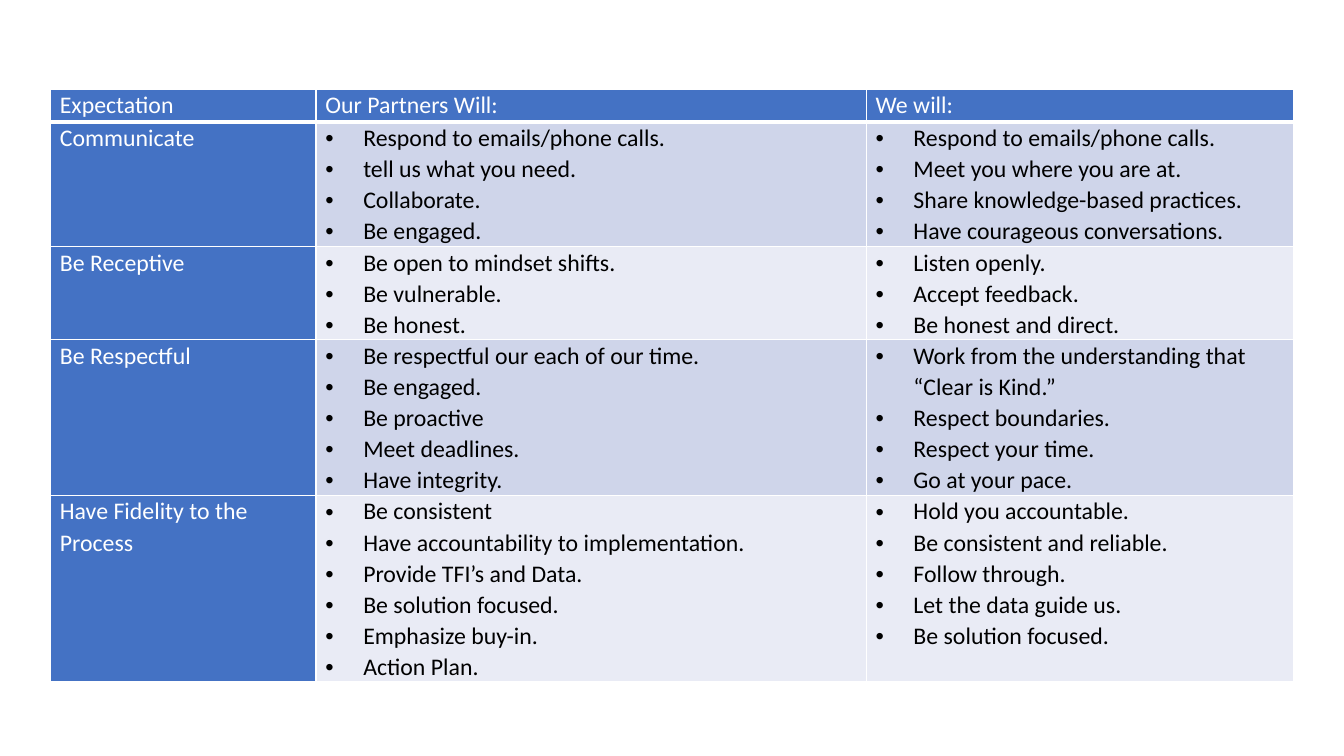
from lxml.etree import SubElement
from pptx import Presentation
from pptx.dml.color import RGBColor
from pptx.oxml.ns import qn
from pptx.util import Pt

EMU_PER_PX = 9525
COLORS = {
    "white": "FFFFFF",
    "black": "000000",
    "blue": "4472C4",
    "band_dark": "CFD5EA",
    "band_light": "E9EBF5",
}
FONT_FORMAT = {"name": "Calibri", "size": Pt(17), "bold": False}
BULLET_INDENT = 36
TABLE_LEFT, TABLE_TOP = 48, 85
COLUMN_WIDTHS = [253, 524, 407]
ROW_HEIGHTS = [31, 116, 87, 144, 173]

HEADINGS = ["Expectation", "Our Partners Will:", "We will:"]
EXPECTATIONS = [
    ("Communicate",
     ["Respond to emails/phone calls.", "tell us what you need.",
      "Collaborate.", "Be engaged."],
     ["Respond to emails/phone calls.", "Meet you where you are at.",
      "Share knowledge-based practices.", "Have courageous conversations."]),
    ("Be Receptive",
     ["Be open to mindset shifts.", "Be vulnerable.", "Be honest."],
     ["Listen openly.", "Accept feedback.", "Be honest and direct."]),
    ("Be Respectful",
     ["Be respectful our each of our time.", "Be engaged.", "Be proactive",
      "Meet deadlines.", "Have integrity."],
     ["Work from the understanding that “Clear is Kind.”",
      "Respect boundaries.", "Respect your time.", "Go at your pace."]),
    ("Have Fidelity to the Process",
     ["Be consistent", "Have accountability to implementation.",
      "Provide TFI’s and Data.", "Be solution focused.",
      "Emphasize buy-in.", "Action Plan."],
     ["Hold you accountable.", "Be consistent and reliable.",
      "Follow through.", "Let the data guide us.", "Be solution focused."]),
]


def px(length):
    return length * EMU_PER_PX


def color(name):
    return RGBColor.from_string(COLORS[name])


def add_bullet(paragraph):
    properties = paragraph._p.get_or_add_pPr()
    properties.set("marL", str(px(BULLET_INDENT)))
    properties.set("indent", str(-px(BULLET_INDENT)))
    SubElement(properties, qn("a:buFont"), typeface="Arial")
    SubElement(properties, qn("a:buChar"), char="•")


def set_borders(cell, bottom_points):
    """Draw white borders, 1 point wide except for the bottom one."""
    properties = cell._tc.get_or_add_tcPr()
    widths = {"a:lnL": 1, "a:lnR": 1, "a:lnT": 1, "a:lnB": bottom_points}
    for tag, points in widths.items():
        line = SubElement(properties, qn(tag), w=str(Pt(points)))
        fill = SubElement(line, qn("a:solidFill"))
        SubElement(fill, qn("a:srgbClr"), val=COLORS["white"])


def write_cell(cell, lines, fill, text_color, bulleted=False, bottom_points=1):
    margins = {"margin_left": px(9), "margin_right": px(9),
               "margin_top": 0, "margin_bottom": 0}
    for name, value in margins.items():
        setattr(cell, name, value)
    set_borders(cell, bottom_points)
    cell.fill.solid()
    cell.fill.fore_color.rgb = color(fill)
    frame = cell.text_frame
    for index, line in enumerate(lines):
        paragraph = frame.add_paragraph() if index else frame.paragraphs[0]
        if bulleted:
            add_bullet(paragraph)
        paragraph.line_spacing = 1.07
        run = paragraph.add_run()
        run.text = line
        for name, value in FONT_FORMAT.items():
            setattr(run.font, name, value)
        run.font.color.rgb = color(text_color)


def add_expectations_table(slide):
    frame = slide.shapes.add_table(
        len(ROW_HEIGHTS), len(COLUMN_WIDTHS), px(TABLE_LEFT), px(TABLE_TOP),
        px(sum(COLUMN_WIDTHS)), px(sum(ROW_HEIGHTS)))
    table = frame.table
    for column, width in zip(table.columns, COLUMN_WIDTHS):
        column.width = px(width)
    for row, height in zip(table.rows, ROW_HEIGHTS):
        row.height = px(height)
    for column, heading in enumerate(HEADINGS):
        write_cell(table.cell(0, column), [heading], "blue", "white",
                   bottom_points=3)
    for row, (expectation, *commitments) in enumerate(EXPECTATIONS, start=1):
        write_cell(table.cell(row, 0), [expectation], "blue", "white")
        band = "band_dark" if row % 2 else "band_light"
        for column, lines in enumerate(commitments, start=1):
            write_cell(table.cell(row, column), lines, band, "black",
                       bulleted=True)


def main():
    presentation = Presentation()
    presentation.slide_width = px(1280)
    presentation.slide_height = px(720)
    slide = presentation.slides.add_slide(presentation.slide_layouts[6])
    add_expectations_table(slide)
    presentation.save("out.pptx")


if __name__ == "__main__":
    main()
